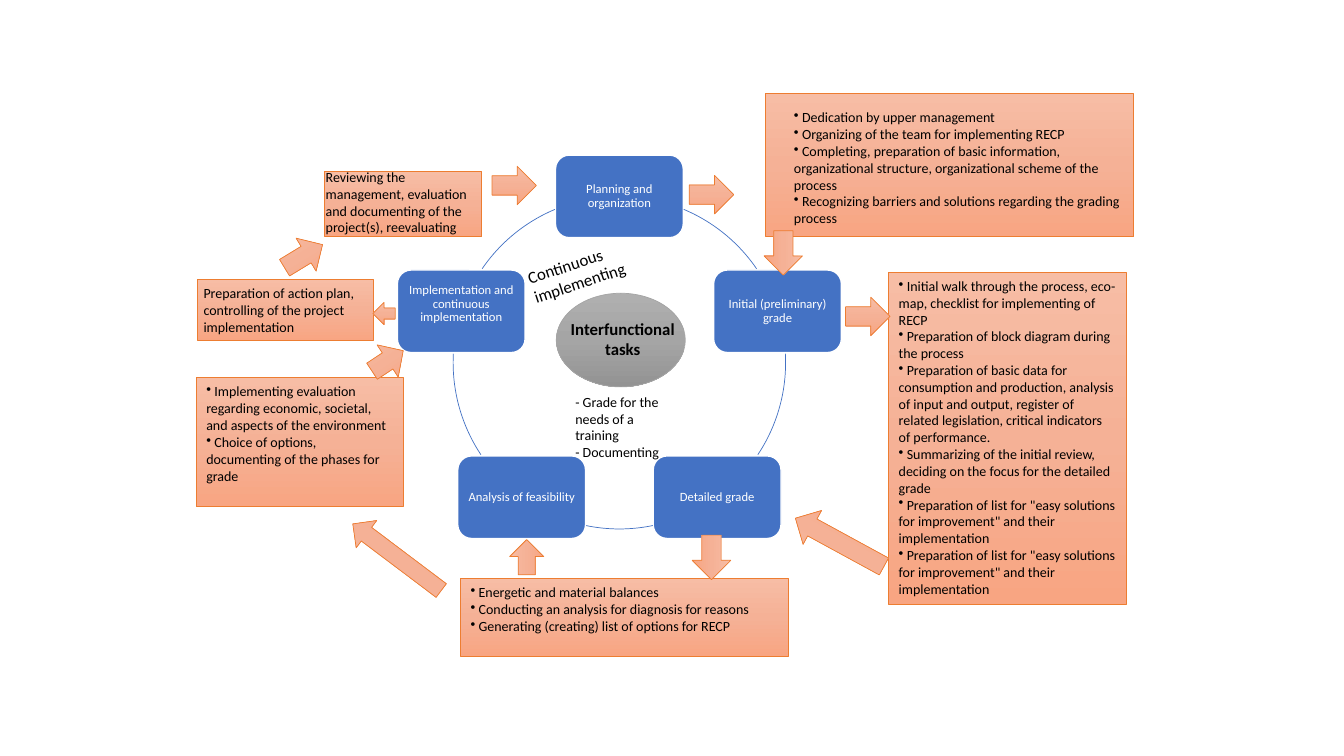
from copy import deepcopy
from math import cos, radians, sin

from pptx import Presentation
from pptx.dml.color import RGBColor
from pptx.enum.shapes import MSO_SHAPE as Preset
from pptx.enum.text import MSO_ANCHOR as Anchor, PP_ALIGN as Align
from pptx.oxml.ns import qn
from pptx.oxml.xmlchemy import OxmlElement
from pptx.util import Cm, Pt

BLACK = RGBColor(0x00, 0x00, 0x00)
WHITE = RGBColor(0xFF, 0xFF, 0xFF)
BLUE = RGBColor(0x44, 0x72, 0xC4)
ORANGE = RGBColor(0xED, 0x7D, 0x31)
GRAY = RGBColor(0xA5, 0xA5, 0xA5)
PEACH_FADE = (RGBColor(0xF7, 0xBD, 0xA5), RGBColor(0xF5, 0xB1, 0x96), RGBColor(0xF8, 0xA5, 0x82))
GRAY_FADE = (RGBColor(0xAF, 0xAF, 0xAF), GRAY, RGBColor(0x93, 0x93, 0x93))

INSETS = (0.25, 0.13, 0.25, 0.13)  # left, top, right, bottom in cm

# Cycle geometry in cm
CENTER_X, CENTER_Y, RADIUS = 15.61, 9.14, 4.19
STEP_W, STEP_H = 3.22, 2.08
ARROW_W, ARROW_H = 1.12, 0.97

# Step, bottom inset, angles where the arc after it starts and ends
STEPS = [
    ("Planning and organization", 0, 292.8, 325.6),
    ("Initial (preliminary) grade", 0, 356.9, 33.6),
    ("Detailed grade", 0, 78.4, 101.6),
    ("Analysis of feasibility", 0, 146.4, 183.1),
    ("Implementation and continuous implementation", 0.36, 214.4, 247.2),
]

# Place, bulleted lines, insets
TASK_LISTS = [
    ((19.3, 2.36, 9.27, 3.61), [
        "Dedication by upper management",
        "Organizing of the team for implementing RECP",
        "Completing, preparation of basic information, organizational structure, "
        "organizational scheme of the process",
        "Recognizing barriers and solutions regarding the grading process",
    ], (0.71, 0.38, 0, 0)),
    ((22.4, 6.86, 5.99, 8.38), [
        "Initial walk through the process, eco-map, checklist for implementing of RECP",
        "Preparation of block diagram during the process",
        "Preparation of basic data for consumption and production, analysis of input and "
        "output, register of related legislation, critical indicators of performance.",
        "Summarizing of the initial review, deciding on the focus for the detailed grade",
    ] + ['Preparation of list for "easy solutions for improvement" and their implementation'] * 2,
        INSETS),
    ((11.61, 14.58, 8.25, 1.96), [
        "Energetic and material balances",
        "Conducting an analysis for diagnosis for reasons",
        "Generating (creating) list of options for RECP",
    ], INSETS),
    ((4.95, 9.52, 5.21, 3.25), [
        "Implementing evaluation regarding economic, societal, and aspects of the environment",
        "Choice of options, documenting of the phases for grade",
    ], INSETS),
]

# Place, text, insets
NOTES = [
    ((8.18, 4.32, 3.96, 1.65),
     "Reviewing the management, evaluation and documenting of the project(s), reevaluating",
     (0.03, 0, 0.28, 0.1)),
    ((4.98, 7.04, 4.42, 1.55),
     "Preparation of action plan, controlling of the project implementation",
     (0.15, 0.1, 0.2, 0.1)),
]

# Left, top, width, height, rotation of the right-pointing arrows
ARROWS = [
    (7.09, 5.97, ARROW_W, ARROW_H, 328.7),
    (12.4, 4.19, ARROW_W, ARROW_H, 0),
    (17.37, 4.42, ARROW_W, ARROW_H, 0),
    (19.18, 5.89, ARROW_W, ARROW_H, 90),
    (21.31, 7.49, ARROW_W, ARROW_H, 0),
    (19.89, 13.18, 2.54, ARROW_H, 208.6),
    (17.37, 13.56, ARROW_W, ARROW_H, 90),
    (12.83, 13.61, 0.89, 0.86, 270),
    (8.61, 13.61, 2.79, 0.86, 217),
    (9.3, 8.61, 0.94, ARROW_H, 326.6),
]


class CycleSlide:
    """Holds the slide and draws its elements; places are in cm."""

    font_name = "Calibri"

    def __init__(self, slide):
        self.shapes = slide.shapes

    def outlined(self, preset, place, line, weight=0.5):
        shape = self.shapes.add_shape(preset, *map(Cm, place))
        shape.shadow.inherit = False
        shape.line.color.rgb = line
        shape.line.width = Pt(weight)
        return shape

    def faded(self, preset, place, fade=PEACH_FADE, line=ORANGE, rotation=0):
        """Add a shape with a three-stop gradient running downwards."""
        shape = self.outlined(preset, place, line)
        shape.rotation = rotation
        shape.fill.gradient()
        shape.fill.gradient_angle = 270
        stops = shape._element.spPr.find(".//" + qn("a:gsLst"))
        middle = deepcopy(stops[0])
        middle.set("pos", "50000")
        stops.insert(1, middle)
        for stop, color in zip(shape.fill.gradient_stops, fade):
            stop.color.rgb = color
        return shape

    def add_lines(self, shape, lines, size=10, color=BLACK, bold=False, bullets=False,
                  align=Align.LEFT, anchor=Anchor.TOP, insets=INSETS, spacing=1.0):
        frame = shape.text_frame
        frame.word_wrap = True
        frame.vertical_anchor = anchor
        (frame.margin_left, frame.margin_top,
         frame.margin_right, frame.margin_bottom) = map(Cm, insets)
        for index, line in enumerate(lines):
            paragraph = frame.add_paragraph() if index else frame.paragraphs[0]
            paragraph.alignment = align
            paragraph.line_spacing = spacing
            if bullets:
                bullet = OxmlElement("a:buChar")
                bullet.set("char", "•")
                paragraph._p.get_or_add_pPr().append(bullet)
            run = paragraph.add_run()
            run.text = " " + line if bullets else line
            run.font.name = self.font_name
            run.font.size = Pt(size)
            run.font.bold = bold
            run.font.color.rgb = color

    def step(self, x, y, text, bottom):
        place = (x - STEP_W / 2, y - STEP_H / 2, STEP_W, STEP_H)
        shape = self.outlined(Preset.ROUNDED_RECTANGLE, place, WHITE, 1)
        shape.fill.solid()
        shape.fill.fore_color.rgb = BLUE
        self.add_lines(shape, [text], size=9, color=WHITE, align=Align.CENTER,
                       anchor=Anchor.MIDDLE, insets=(0, 0, 0, bottom), spacing=0.9)

    def arc(self, start, end):
        place = (CENTER_X - RADIUS, CENTER_Y - RADIUS, 2 * RADIUS, 2 * RADIUS)
        arc = self.outlined(Preset.ARC, place, BLUE)
        arc.fill.background()
        # Angles are stored in 60000ths of a degree, adjustments in 100000ths
        arc.adjustments[0] = start * 0.6
        arc.adjustments[1] = end * 0.6

    def box(self, place, lines, **style):
        self.add_lines(self.faded(Preset.RECTANGLE, place), lines, **style)

    def label(self, place, lines, rotation=0, **style):
        label = self.shapes.add_textbox(*map(Cm, place))
        label.rotation = rotation
        self.add_lines(label, lines, **style)


def main():
    deck = Presentation()
    deck.slide_width, deck.slide_height = Cm(33.87), Cm(19.05)
    cycle = CycleSlide(deck.slides.add_slide(deck.slide_layouts[6]))

    for index, (text, bottom, start, end) in enumerate(STEPS):
        angle = radians(index * 360 / len(STEPS) - 90)
        cycle.step(CENTER_X + RADIUS * cos(angle), CENTER_Y + RADIUS * sin(angle), text, bottom)
        cycle.arc(start, end)

    for place, text, insets in NOTES:
        cycle.box(place, [text], anchor=Anchor.MIDDLE, insets=insets)
    for place, tasks, insets in TASK_LISTS:
        cycle.box(place, tasks, bullets=True, insets=insets)

    cycle.faded(Preset.LEFT_ARROW, (9.4, 7.62, 0.56, 0.56))
    for *place, rotation in ARROWS:
        cycle.faded(Preset.RIGHT_ARROW, place, rotation=rotation)

    cycle.faded(Preset.OVAL, (14.02, 7.39, 3.25, 2.36), GRAY_FADE, GRAY)
    cycle.label((14.07, 7.9, 3.25, 1.27), ["Interfunctional tasks"],
                size=12, bold=True, align=Align.CENTER)
    cycle.label((14.25, 9.78, 3, 1.96), ["- Grade for the needs of a training", "- Documenting"])
    cycle.label((13.06, 6.12, 3.61, 1.27), ["Continuous implementing"], rotation=341.6, size=12)

    deck.save("out.pptx")


if __name__ == "__main__":
    main()
